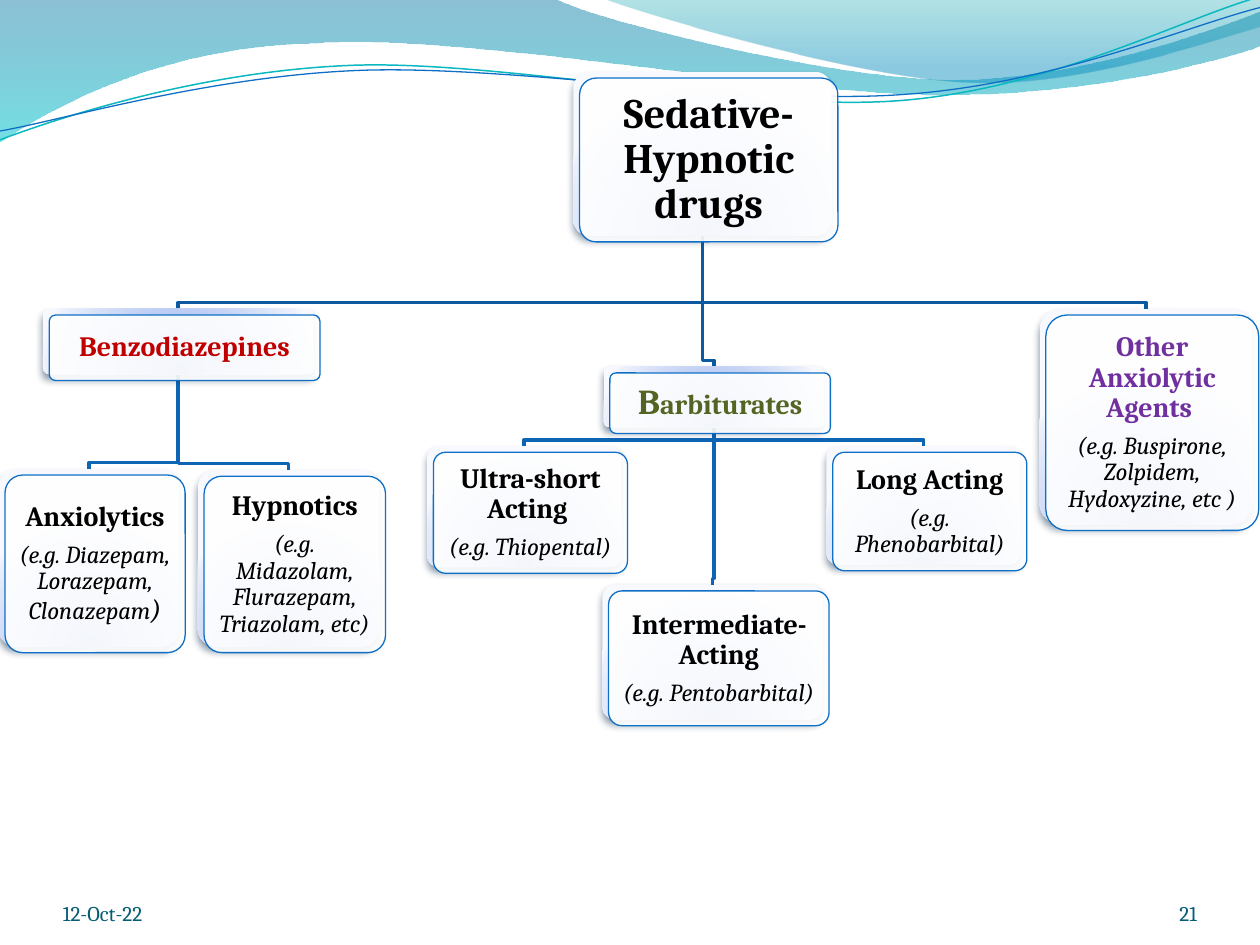
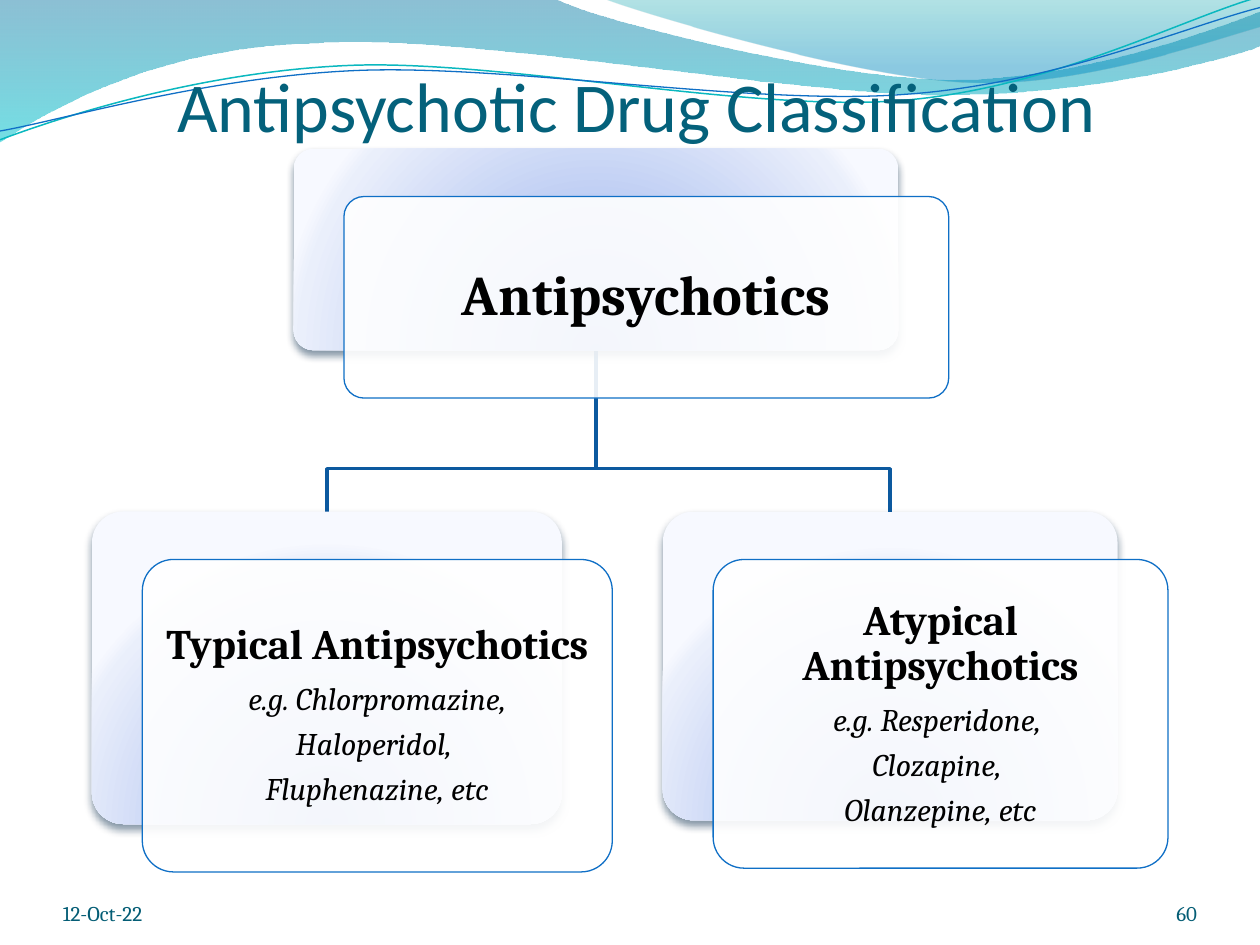
from dataclasses import dataclass
from typing import Optional

from lxml import etree
from pptx import Presentation
from pptx import util as u
from pptx.dml.color import RGBColor
from pptx.enum import shapes, text
from pptx.oxml import ns

# Shared colours and fonts
BLACK, WHITE = "000000", "FFFFFF"
TITLE_TEAL, FOOTER_TEAL = "04617B", "045D75"
OUTLINE_BLUE, WAVE_TEAL = "0F6FC6", "0AB8BF"
LEVEL_1_LINK, LEVEL_2_LINK = "0C599F", "0E65B4"
CARD_STOPS = [(0, "8DA8E3", 100), (43, "BBCBF3", 100),
              (93, "EAEFFB", 100), (100, "F7F9FF", 100)]
BODY_FONT, TITLE_FONT = "Cambria", "Calibri"
DATE = "12-Oct-22"


@dataclass
class Run:
    text: str
    size: float
    color: str = BLACK
    bold: bool = False
    italic: bool = False
    font: str = BODY_FONT


@dataclass
class Card:
    name: str
    left: float
    top: float
    width: float
    height: float
    paras: list[list[Run]]
    parent: Optional[str] = None
    link: str = LEVEL_1_LINK

    @property
    def center(self) -> float:
        return self.left + self.width / 2


@dataclass
class Wave:
    start: tuple
    segments: list[tuple]  # 2 numbers: line to; 6 numbers: curve to
    stops: Optional[list[tuple]] = None
    line: Optional[tuple] = None


# Waves along the top of every slide
WAVES = [
    Wave((0, 0), [(4.4, -0.01), (4.76, 0.17, 6.64, 0.63, 7.58, 0.63),
                  (8.53, 0.63, 9.58, 0.26, 10, 0.09), (10.01, 0.36),
                  (9.83, 0.44, 8.7, 0.76, 7.46, 0.75),
                  (6.22, 0.75, 3.82, 0.28, 2.57, 0.34),
                  (1.29, 0.36, 0.46, 0.83, -0.01, 1.13), (0, 0)],
         stops=[(0, "0074A1", 45), (100, "00C6CF", 55)]),
    Wave((4.79, -0.01), [(5.09, 0.11, 6.82, 0.62, 7.69, 0.65),
                         (8.56, 0.69, 9.61, 0.32, 10, 0.21), (10, 0), (4.79, -0.01)],
         stops=[(0, "00A1A9", 30), (80, "008BBF", 45)]),
    Wave((0, 1.11), [(0.48, 0.93, 1.58, 0.57, 2.77, 0.52),
                     (3.95, 0.47, 5.93, 0.89, 7.13, 0.8),
                     (8.33, 0.71, 9.38, 0.15, 9.98, -0.02)],
         line=(WAVE_TEAL, 0.85)),
    Wave((0, 1.04), [(0.47, 0.96, 1.64, 0.61, 2.83, 0.56),
                     (4.03, 0.51, 5.97, 0.84, 7.17, 0.75),
                     (8.36, 0.67, 9.41, 0.21, 10, 0.06)],
         line=(OUTLINE_BLUE, 0.75)),
]


def rgb(value: str) -> RGBColor:
    return RGBColor.from_string(value)


def add_xml(parent, tag: str, **attrs):
    return etree.SubElement(parent, ns.qn(tag), {k: str(v) for k, v in attrs.items()})


def add_color(parent, color: str, opacity: float) -> None:
    clr = add_xml(parent, "a:srgbClr", val=color)
    if opacity < 100:
        add_xml(clr, "a:alpha", val=opacity * 1000)


def fill_gradient(sp, stops: list[tuple], radial: bool = False) -> None:
    sp.fill.gradient()
    grad = sp.element.spPr.find(ns.qn("a:gradFill"))
    grad.clear()
    gs_list = add_xml(grad, "a:gsLst")
    for pos, color, opacity in stops:
        add_color(add_xml(gs_list, "a:gs", pos=pos * 1000), color, opacity)
    if radial:
        circle = add_xml(grad, "a:path", path="circle")
        add_xml(circle, "a:fillToRect", l=50000, t=130000, r=50000, b=-30000)
    else:
        add_xml(grad, "a:lin", ang=90 * 60000, scaled=1)


def set_line(sp, color: str, width: float) -> None:
    sp.line.color.rgb = rgb(color)
    sp.line.width = u.Pt(width)


def add_run(p, run: Run) -> None:
    r = p.add_run()
    r.text = run.text
    f = r.font
    f.name, f.size, f.bold, f.italic = run.font, u.Pt(run.size), run.bold, run.italic
    f.color.rgb = rgb(run.color)


def set_margins(tf, left: int, top: int, right: int, bottom: int) -> None:
    tf.margin_left, tf.margin_top = left, top
    tf.margin_right, tf.margin_bottom = right, bottom


def add_path(slide, points: list[tuple], close: bool = False):
    pts = [(u.Inches(x), u.Inches(y)) for x, y in points]
    builder = slide.shapes.build_freeform(*pts[0], scale=1.0)
    builder.add_line_segments(pts[1:], close=close)
    sp = builder.convert_to_shape()
    sp.shadow.inherit = False
    if not close:
        sp.fill.background()
    return sp


def add_wave(slide, wave: Wave):
    """Outline the end points, then turn the six-number segments into curves."""
    ends = [wave.start] + [seg[-2:] for seg in wave.segments]
    sp = add_path(slide, ends, close=wave.stops is not None)
    line_tos = list(sp.element.iter(ns.qn("a:lnTo")))
    for line_to, seg in zip(line_tos, wave.segments):
        if len(seg) == 6:
            curve = etree.Element(ns.qn("a:cubicBezTo"))
            for x, y in zip(seg[::2], seg[1::2]):
                add_xml(curve, "a:pt", x=u.Inches(x) - sp.left, y=u.Inches(y) - sp.top)
            line_to.getparent().replace(line_to, curve)
    return sp


def add_waves_to_master(prs, slide) -> None:
    """Draw the waves, then move them to the master so all slides share them."""
    for wave in WAVES:
        sp = add_wave(slide, wave)
        if wave.stops:
            fill_gradient(sp, wave.stops)
            sp.line.fill.background()
        else:
            set_line(sp, *wave.line)
        prs.slide_master.element.cSld.spTree.append(sp.element)


def add_text(slide, left: float, width: float, content: str, align) -> None:
    tf = slide.shapes.add_textbox(u.Inches(left), u.Inches(6.95),
                                  u.Inches(width), u.Inches(0.4)).text_frame
    tf.word_wrap = True
    tf.vertical_anchor = text.MSO_ANCHOR.BOTTOM
    set_margins(tf, 0, 0, 0, 0)
    tf.paragraphs[0].alignment = align
    add_run(tf.paragraphs[0], Run(content, 12, FOOTER_TEAL))


def add_footer(slide, number: int) -> None:
    add_text(slide, 8.67, 0.83, str(number), text.PP_ALIGN.RIGHT)
    add_text(slide, 0.5, 2.33, DATE, text.PP_ALIGN.LEFT)


def add_title(slide, content: str) -> None:
    sp = slide.shapes.title
    sp.left, sp.top, sp.width, sp.height = map(u.Inches, (0.55, 0.31, 9, 0.85))
    tf = sp.text_frame
    tf.vertical_anchor = text.MSO_ANCHOR.BOTTOM
    set_margins(tf, 0, u.Inches(0.05), 0, 0)
    tf.paragraphs[0].alignment = text.PP_ALIGN.CENTER
    add_run(tf.paragraphs[0], Run(content, 40, TITLE_TEAL, font=TITLE_FONT))


def add_rounded(slide, card: Card, dx: float = 0, dy: float = 0):
    sp = slide.shapes.add_shape(
        shapes.MSO_SHAPE.ROUNDED_RECTANGLE, u.Inches(card.left + dx),
        u.Inches(card.top + dy), u.Inches(card.width), u.Inches(card.height))
    sp.adjustments[0] = 0.1
    sp.shadow.inherit = False
    return sp


def add_card(slide, card: Card, dx: float, dy: float) -> None:
    # Shaded back plate with a soft shadow
    back = add_rounded(slide, card)
    fill_gradient(back, CARD_STOPS, radial=True)
    back.line.fill.background()
    effects = back.element.spPr.find(ns.qn("a:effectLst"))
    shadow = add_xml(effects, "a:outerShdw", blurRad=u.Pt(4.5), dist=u.Pt(3),
                     dir=90 * 60000, rotWithShape=0)
    add_color(shadow, "042747", 48)

    # Translucent front plate with the text
    front = add_rounded(slide, card, dx, dy)
    front.fill.solid()
    front.fill.fore_color.rgb = rgb(WHITE)
    clr = front.element.spPr.find(ns.qn("a:solidFill"))[0]
    add_xml(clr, "a:alpha", val=90000)
    set_line(front, OUTLINE_BLUE, 0.75)
    tf = front.text_frame
    tf.word_wrap = True
    tf.vertical_anchor = text.MSO_ANCHOR.MIDDLE
    set_margins(tf, *[u.Pt(0.3 * card.paras[0][0].size)] * 4)
    for i, runs in enumerate(card.paras):
        p = tf.add_paragraph() if i else tf.paragraphs[0]
        p.alignment = text.PP_ALIGN.CENTER
        p.line_spacing = 0.9
        p.space_after = u.Pt(0.35 * runs[0].size)
        for run in runs:
            add_run(p, run)


def add_tree(slide, cards: list[Card], dx: float, dy: float, drop: float) -> None:
    """Links lie behind the cards and bend at `drop` above each child."""
    by_name = {card.name: card for card in cards}
    for card in cards:
        if card.parent:
            parent = by_name[card.parent]
            bend = card.top - drop
            sp = add_path(slide, [(parent.center, parent.top + parent.height),
                                  (parent.center, bend), (card.center, bend),
                                  (card.center, card.top)])
            set_line(sp, card.link, 2)
    for card in cards:
        add_card(slide, card, dx, dy)


def head(content: str, size: float = 16, color: str = BLACK) -> list[Run]:
    return [Run(content, size, color, bold=True)]


def eg(content: str, size: float = 14) -> list[Run]:
    return [Run(content, size, italic=True)]


SEDATIVES = [
    Card("root", 4.55, 0.57, 2.05, 1.3, [head("Sedative-Hypnotic drugs", 24)]),
    Card("benzo", 0.34, 2.45, 2.15, 0.52,
         [head("Benzodiazepines", color="C00000")], "root"),
    Card("anxiolytics", -0.01, 3.72, 1.43, 1.41,
         [head("Anxiolytics"),
          eg("(e.g. Diazepam, Lorazepam, Clonazepam") + eg(")", 16)],
         "benzo", LEVEL_2_LINK),
    Card("hypnotics", 1.57, 3.73, 1.44, 1.4,
         [head("Hypnotics"), eg("(e.g. Midazolam, Flurazepam, Triazolam, etc) ")],
         "benzo", LEVEL_2_LINK),
    Card("barb", 4.79, 2.91, 1.75, 0.48,
         [head("B", 20, "546422") + head("arbiturates", color="546422")], "root"),
    Card("ultra-short", 3.39, 3.54, 1.54, 0.96,
         [head("Ultra-short Acting "), eg("(e.g. Thiopental)")], "barb", LEVEL_2_LINK),
    Card("intermediate", 4.78, 4.64, 1.75, 1.07,
         [head("Intermediate-Acting"), eg("(e.g. Pentobarbital)")],
         "barb", LEVEL_2_LINK),
    Card("long", 6.56, 3.54, 1.54, 0.94,
         [head("Long Acting"), eg("(e.g. Phenobarbital)")], "barb", LEVEL_2_LINK),
    Card("other", 8.25, 2.45, 1.69, 1.71,
         [head("Other Anxiolytic Agents ", color="7030A0"),
          eg("(e.g. Buspirone, Zolpidem, Hydoxyzine, etc )")], "root"),
]

ANTIPSYCHOTICS = [
    Card("root", 2.33, 1.18, 4.8, 1.6, [head("Antipsychotics", 32)]),
    Card("typical", 0.73, 4.06, 3.73, 2.48,
         [head("Typical Antipsychotics ", 24), eg("e.g. Chlorpromazine,", 18),
          eg("Haloperidol, ", 18), eg("Fluphenazine, etc", 18)], "root"),
    Card("atypical", 5.26, 4.06, 3.61, 2.45,
         [head("Atypical Antipsychotics", 24), eg("e.g. Resperidone, ", 18),
          eg("Clozapine, ", 18), eg("Olanzepine, etc", 18)], "root"),
]


def main() -> None:
    prs = Presentation()
    prs.slide_width, prs.slide_height = u.Inches(10), u.Inches(7.5)
    title_only, blank = prs.slide_layouts[5], prs.slide_layouts[6]

    # Sedative-hypnotic drugs
    s = prs.slides.add_slide(blank)
    add_waves_to_master(prs, s)
    add_tree(s, SEDATIVES, dx=0.05, dy=0.05, drop=0.05)
    add_footer(s, 21)

    # Antipsychotic drugs
    s = prs.slides.add_slide(title_only)
    add_title(s, "Antipsychotic Drug Classification")
    add_tree(s, ANTIPSYCHOTICS, dx=0.4, dy=0.38, drop=0.34)
    add_footer(s, 60)

    prs.save("out.pptx")


if __name__ == "__main__":
    main()
